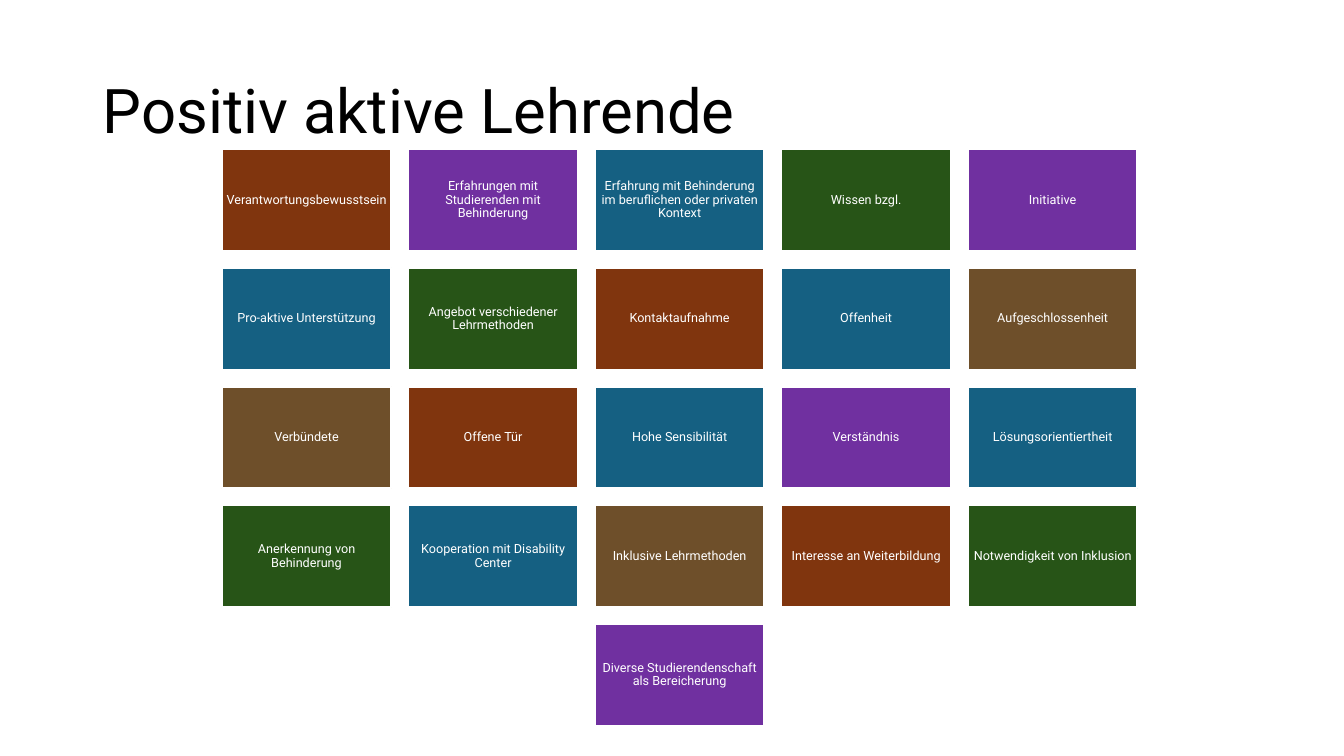
"""Build the slide "Positiv aktive Lehrende": a grid of coloured trait tiles."""
from dataclasses import dataclass

from pptx import Presentation
from pptx.dml.color import RGBColor
from pptx.enum.shapes import MSO_SHAPE as Preset
from pptx.enum.text import MSO_ANCHOR as Anchor, PP_ALIGN as Align
from pptx.shapes.base import BaseShape
from pptx.slide import Slide
from pptx.util import Inches, Pt

COLOURS = {
    "rust": "80350E",
    "purple": "7030A0",
    "blue": "156082",
    "green": "275417",
    "brown": "6E4F2A",
    "white": "FFFFFF",
    "black": "000000",
}
FONT = "Roboto"
COLUMNS = 5
TILE_WIDTH, TILE_HEIGHT = 1.68, 1.01
GRID_LEFT, GRID_TOP, LAST_ROW_TOP = 2.2, 1.48, 6.19
COLUMN_PITCH = 1.85


@dataclass(frozen=True)
class Tile:
    label: str
    colour: str


TILES = [
    Tile("Verantwortungsbewusstsein", "rust"),
    Tile("Erfahrungen mit Studierenden mit Behinderung", "purple"),
    Tile("Erfahrung mit Behinderung im beruflichen oder privaten Kontext", "blue"),
    Tile("Wissen bzgl.", "green"),
    Tile("Initiative", "purple"),
    Tile("Pro-aktive Unterstützung", "blue"),
    Tile("Angebot verschiedener Lehrmethoden", "green"),
    Tile("Kontaktaufnahme", "rust"),
    Tile("Offenheit", "blue"),
    Tile("Aufgeschlossenheit", "brown"),
    Tile("Verbündete", "brown"),
    Tile("Offene Tür", "rust"),
    Tile("Hohe Sensibilität", "blue"),
    Tile("Verständnis", "purple"),
    Tile("Lösungsorientiertheit", "blue"),
    Tile("Anerkennung von Behinderung", "green"),
    Tile("Kooperation mit Disability Center", "blue"),
    Tile("Inklusive Lehrmethoden", "brown"),
    Tile("Interesse an Weiterbildung", "rust"),
    Tile("Notwendigkeit von Inklusion", "green"),
    Tile("Diverse Studierendenschaft als Bereicherung", "purple"),
]


def colour(name: str) -> RGBColor:
    return RGBColor.from_string(COLOURS[name])


def write(box: BaseShape, text: str, *, size: float, ink: str,
          align: Align = Align.LEFT, inset: tuple[float, float] = (0.1, 0.05)) -> None:
    frame = box.text_frame
    frame.word_wrap = True
    frame.vertical_anchor = Anchor.MIDDLE
    frame.margin_left = frame.margin_right = Inches(inset[0])
    frame.margin_top = frame.margin_bottom = Inches(inset[1])
    para = frame.paragraphs[0]
    para.alignment = align
    para.line_spacing = 0.9
    span = para.add_run()
    span.text = text
    span.font.name = FONT
    span.font.size = Pt(size)
    span.font.color.rgb = colour(ink)


def draw_title(page: Slide, text: str) -> None:
    box = page.shapes.add_textbox(Inches(0.92), Inches(0.4), Inches(11.5), Inches(1.45))
    write(box, text, size=44, ink="black")


def draw_tile(page: Slide, tile: Tile, left: float, top: float) -> None:
    box = page.shapes.add_shape(Preset.RECTANGLE, Inches(left), Inches(top),
                                Inches(TILE_WIDTH), Inches(TILE_HEIGHT))
    box.shadow.inherit = False
    box.fill.solid()
    box.fill.fore_color.rgb = colour(tile.colour)
    box.line.color.rgb = colour("white")
    box.line.width = Pt(1.5)
    write(box, tile.label, size=9, ink="white", align=Align.CENTER, inset=(0.04, 0.04))


def draw_grid(page: Slide, tiles: list[Tile]) -> None:
    rows = [tiles[start:start + COLUMNS] for start in range(0, len(tiles), COLUMNS)]
    row_pitch = (LAST_ROW_TOP - GRID_TOP) / (len(rows) - 1)
    for row, members in enumerate(rows):
        indent = (COLUMNS - len(members)) / 2
        for column, tile in enumerate(members):
            draw_tile(page, tile, GRID_LEFT + (column + indent) * COLUMN_PITCH,
                      GRID_TOP + row * row_pitch)


def main() -> None:
    deck = Presentation()
    deck.slide_width, deck.slide_height = Inches(13.33), Inches(7.5)
    page = deck.slides.add_slide(deck.slide_layouts[6])
    draw_title(page, "Positiv aktive Lehrende")
    draw_grid(page, TILES)
    deck.save("out.pptx")


if __name__ == "__main__":
    main()
